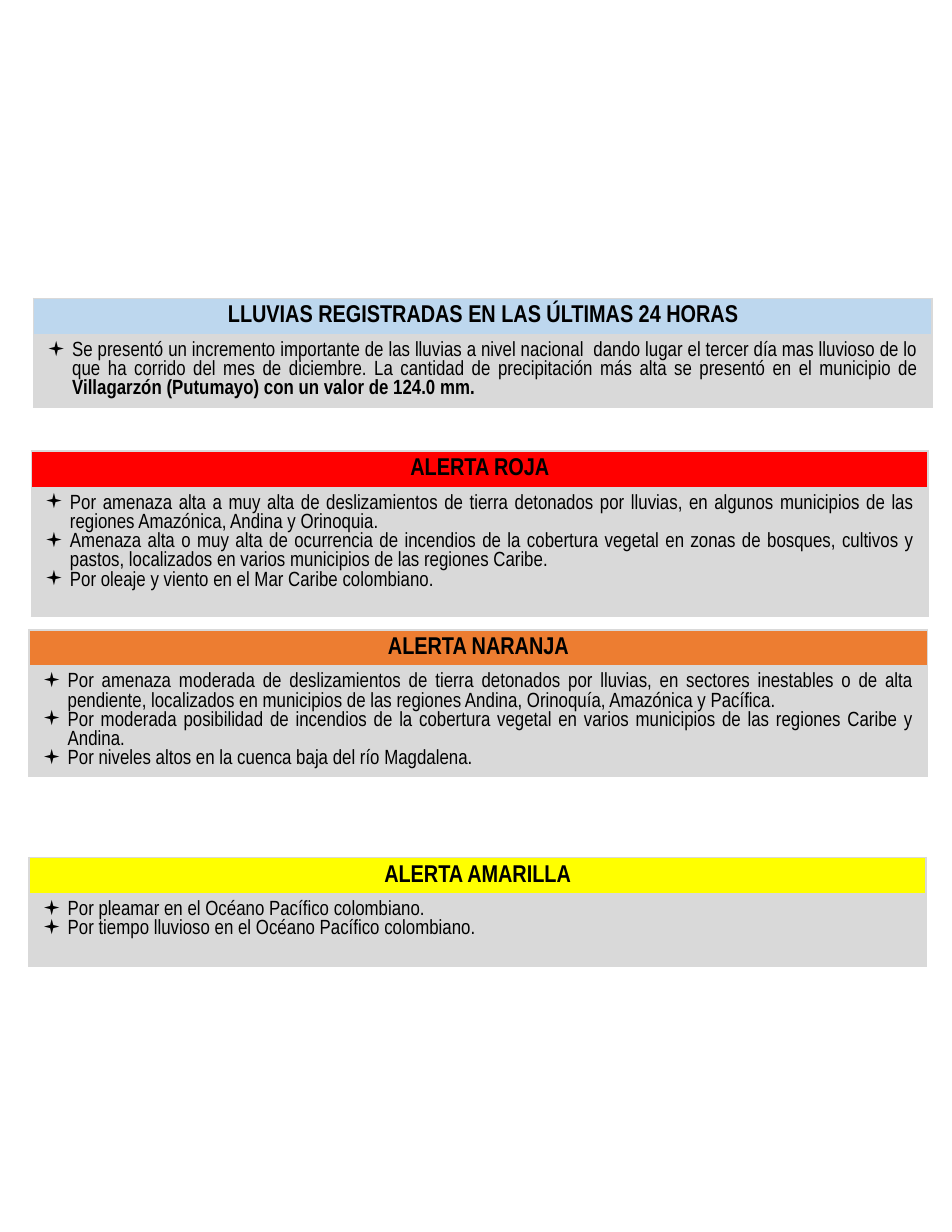
from lxml import etree
from pptx import Presentation
from pptx import util as u
from pptx.dml.color import RGBColor
from pptx.enum import text
from pptx.oxml import ns

BLACK = RGBColor(0x00, 0x00, 0x00)
GRAY = RGBColor(0xD9, 0xD9, 0xD9)
BLUE = RGBColor(0xBD, 0xD7, 0xEE)
RED = RGBColor(0xFF, 0x00, 0x00)
ORANGE = RGBColor(0xED, 0x7D, 0x31)
YELLOW = RGBColor(0xFF, 0xFF, 0x00)


def write(p, content, size=11, bold=False, color=BLACK, font="Arial Narrow"):
    r = p.add_run()
    r.text = content
    r.font.name = font
    r.font.size = u.Pt(size)
    r.font.bold = bold
    r.font.color.rgb = color


class Bulletin:
    header_height = 19.3
    indent = 13.5
    border = 1

    def __init__(self, slide):
        self.s = slide

    def paint(self, cell, color):
        cell.fill.solid()
        cell.fill.fore_color.rgb = color
        tc_pr = cell._tc.get_or_add_tcPr()
        for i, side in enumerate(("a:lnL", "a:lnR", "a:lnT", "a:lnB")):
            ln = etree.Element(ns.qn(side), w=str(u.Pt(self.border)))
            fill = etree.SubElement(ln, ns.qn("a:solidFill"))
            etree.SubElement(fill, ns.qn("a:srgbClr"), val=str(GRAY))
            tc_pr.insert(i, ln)

    def bullet(self, p):
        p.alignment = text.PP_ALIGN.JUSTIFY
        p_pr = p._p.get_or_add_pPr()
        p_pr.set("marL", str(u.Pt(self.indent)))
        p_pr.set("indent", str(-u.Pt(self.indent)))
        etree.SubElement(p_pr, ns.qn("a:buFont"), typeface="Wingdings")
        etree.SubElement(p_pr, ns.qn("a:buChar"), char="▪")

    def panel(self, left, top, width, body_height, title, color, items):
        heights = (self.header_height, body_height)
        frame = self.s.shapes.add_table(2, 1, u.Pt(left), u.Pt(top),
                                        u.Pt(width), u.Pt(sum(heights)))
        table = frame.table
        table.first_row = table.horz_banding = False
        for row, height in zip(table.rows, heights):
            row.height = u.Pt(height)
        header, body = table.cell(0, 0), table.cell(1, 0)
        self.paint(header, color)
        self.paint(body, GRAY)

        p = header.text_frame.paragraphs[0]
        p.alignment = text.PP_ALIGN.CENTER
        write(p, title, size=13, bold=True)

        # Each item is a plain text and an optional bold ending
        tf = body.text_frame
        for i, (plain, *strong) in enumerate(items):
            p = tf.add_paragraph() if i else tf.paragraphs[0]
            self.bullet(p)
            write(p, plain)
            for ending in strong:
                write(p, ending, bold=True)


def main():
    prs = Presentation()
    prs.slide_width = u.Pt(510.24)
    prs.slide_height = u.Pt(660.47)
    bulletin = Bulletin(prs.slides.add_slide(prs.slide_layouts[6]))

    # Rainfall
    bulletin.panel(
        18, 160, 481.5, 39, "LLUVIAS REGISTRADAS EN LAS ÚLTIMAS 24 HORAS", BLUE,
        [("Se presentó un incremento importante de las lluvias a nivel nacional  "
          "dando lugar el tercer día mas lluvioso de lo que ha corrido del mes de "
          "diciembre. La cantidad de precipitación más alta se presentó en el "
          "municipio de ",
          "Villagarzón (Putumayo) con un valor de 124.0 mm.")])

    # Red alert
    bulletin.panel(
        16.8, 241.8, 480.7, 69.3, "ALERTA ROJA", RED,
        [("Por amenaza alta a muy alta de deslizamientos de tierra detonados por "
          "lluvias, en algunos municipios de las regiones Amazónica, Andina y "
          "Orinoquia.",),
         ("Amenaza alta o muy alta de ocurrencia de incendios de la cobertura "
          "vegetal en zonas de bosques, cultivos y pastos, localizados en varios "
          "municipios de las regiones Caribe.",),
         ("Por oleaje y viento en el Mar Caribe colombiano.",)])

    # Orange alert
    bulletin.panel(
        15.6, 337.6, 481.5, 59.3, "ALERTA NARANJA", ORANGE,
        [("Por amenaza moderada de deslizamientos de tierra detonados por lluvias, "
          "en sectores inestables o de alta pendiente, localizados en municipios "
          "de las regiones Andina, Orinoquía, Amazónica y Pacífica.",),
         ("Por moderada posibilidad de incendios de la cobertura vegetal en varios "
          "municipios de las regiones Caribe y Andina.",),
         ("Por niveles altos en la cuenca baja del río Magdalena.",)])

    # Yellow alert
    bulletin.panel(
        15.6, 459.8, 480.7, 38.5, "ALERTA AMARILLA", YELLOW,
        [("Por pleamar en el Océano Pacífico colombiano.",),
         ("Por tiempo lluvioso en el Océano Pacífico colombiano.",)])

    prs.save("out.pptx")


if __name__ == "__main__":
    main()
